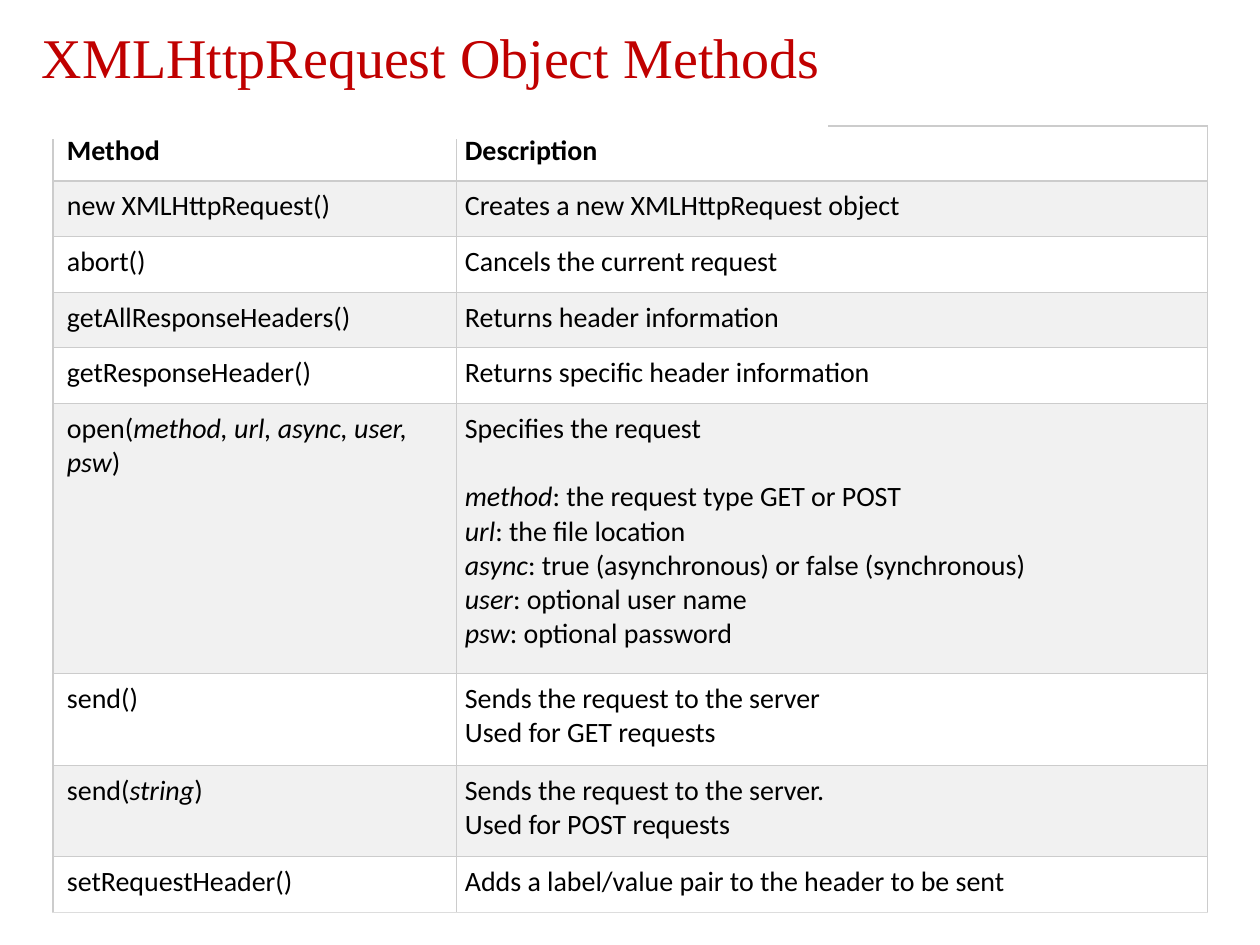
from itertools import pairwise

from lxml import etree
from pptx import Presentation
from pptx.dml.color import RGBColor
from pptx.enum.shapes import MSO_SHAPE
from pptx.enum.text import MSO_ANCHOR, PP_ALIGN
from pptx.oxml.ns import qn
from pptx.util import Pt

EMU_PER_PX = 914400 // 126
COLUMN_EDGES = [53, 457, 1208]
ROW_EDGES = [126, 181, 237, 293, 348, 404, 674, 766, 857, 913]
LINE_PT = 19.5

# Asterisks enclose italics, \n starts a paragraph, \v breaks a line.
METHODS = [
    ("Method", "Description"),
    ("new XMLHttpRequest()", "Creates a new XMLHttpRequest object"),
    ("abort()", "Cancels the current request"),
    ("getAllResponseHeaders()", "Returns header information"),
    ("getResponseHeader()", "Returns specific header information"),
    (
        "open(*method, url, async, user, psw*)",
        "Specifies the request\n"
        "*method*: the request type GET or POST\v"
        "*url*: the file location\v"
        "*async*: true (asynchronous) or false (synchronous)\v"
        "*user*: optional user name\v"
        "*psw*: optional password",
    ),
    ("send()", "Sends the request to the server\vUsed for GET requests"),
    ("send(*string*)", "Sends the request to the server.\vUsed for POST requests"),
    ("setRequestHeader()", "Adds a label/value pair to the header to be sent"),
]


def px(length):
    return length * EMU_PER_PX


def color(hex_value):
    return RGBColor.from_string(hex_value)


def paint(fill, hex_value):
    fill.solid()
    fill.fore_color.rgb = color(hex_value)


def set_attributes(target, values):
    for name, value in values.items():
        setattr(target, name, value)


def add_run(paragraph, text, font_color, **font_values):
    run = paragraph.add_run()
    run.text = text
    set_attributes(run.font, font_values)
    run.font.color.rgb = color(font_color)


def add_marked_text(paragraph, text, **font_values):
    """Add runs, with the parts between asterisks in italics."""
    for part_index, part in enumerate(text.split("*")):
        for line_index, line in enumerate(part.split("\v")):
            if line_index:
                paragraph.add_line_break()
            if line:
                add_run(paragraph, line, "000000", italic=part_index % 2 == 1,
                        **font_values)


def set_borders(cell, bottom_color):
    properties = cell._tc.get_or_add_tcPr()
    for side in "LRTB":
        line = etree.SubElement(properties, qn(f"a:ln{side}"), w=str(Pt(0.75)))
        fill = etree.SubElement(line, qn("a:solidFill"))
        line_color = bottom_color if side == "B" else "CCCCCC"
        etree.SubElement(fill, qn("a:srgbClr"), val=line_color)


def fill_cell(cell, text, row, column):
    set_borders(cell, "DDDDDD" if row == len(METHODS) - 1 else "CCCCCC")
    paint(cell.fill, "F1F1F1" if row % 2 else "FFFFFF")
    set_attributes(cell, {
        "margin_left": px(8 if column else 14),
        "margin_right": px(8),
        "margin_top": px(8),
        "margin_bottom": px(8),
    })
    frame = cell.text_frame
    for index, content in enumerate(text.split("\n")):
        paragraph = frame.add_paragraph() if index else frame.paragraphs[0]
        if index:
            paragraph.space_before = Pt(LINE_PT)
        add_marked_text(paragraph, content, name="Calibri", size=Pt(16),
                        bold=row == 0)


def add_method_table(slide):
    left, right = COLUMN_EDGES[0], COLUMN_EDGES[-1]
    top, bottom = ROW_EDGES[0], ROW_EDGES[-1]
    table = slide.shapes.add_table(
        len(METHODS), 2, px(left), px(top), px(right - left), px(bottom - top)
    ).table
    for column, (start, end) in zip(table.columns, pairwise(COLUMN_EDGES)):
        column.width = px(end - start)
    for row, (start, end) in zip(table.rows, pairwise(ROW_EDGES)):
        row.height = px(end - start)
    for row, texts in enumerate(METHODS):
        for column, text in enumerate(texts):
            fill_cell(table.cell(row, column), text, row, column)


def add_title(slide, text):
    """Add the title on a white panel that overlaps the top of the table."""
    shape = slide.shapes.add_shape(
        MSO_SHAPE.RECTANGLE, px(42), px(8), px(786), px(131)
    )
    shape.shadow.inherit = False
    paint(shape.fill, "FFFFFF")
    shape.line.fill.background()
    frame = shape.text_frame
    set_attributes(frame, {
        "word_wrap": True,
        "vertical_anchor": MSO_ANCHOR.TOP,
        "margin_left": 0,
        "margin_right": 0,
        "margin_top": px(15),
        "margin_bottom": px(13),
    })
    paragraph = frame.paragraphs[0]
    paragraph.alignment = PP_ALIGN.LEFT
    add_run(paragraph, text, "C00000", name="Times New Roman", size=Pt(32))


def main():
    presentation = Presentation()
    presentation.slide_width = px(1260)
    presentation.slide_height = px(945)
    slide = presentation.slides.add_slide(presentation.slide_layouts[6])
    add_method_table(slide)
    add_title(slide, "XMLHttpRequest Object Methods")
    presentation.save("out.pptx")


if __name__ == "__main__":
    main()
